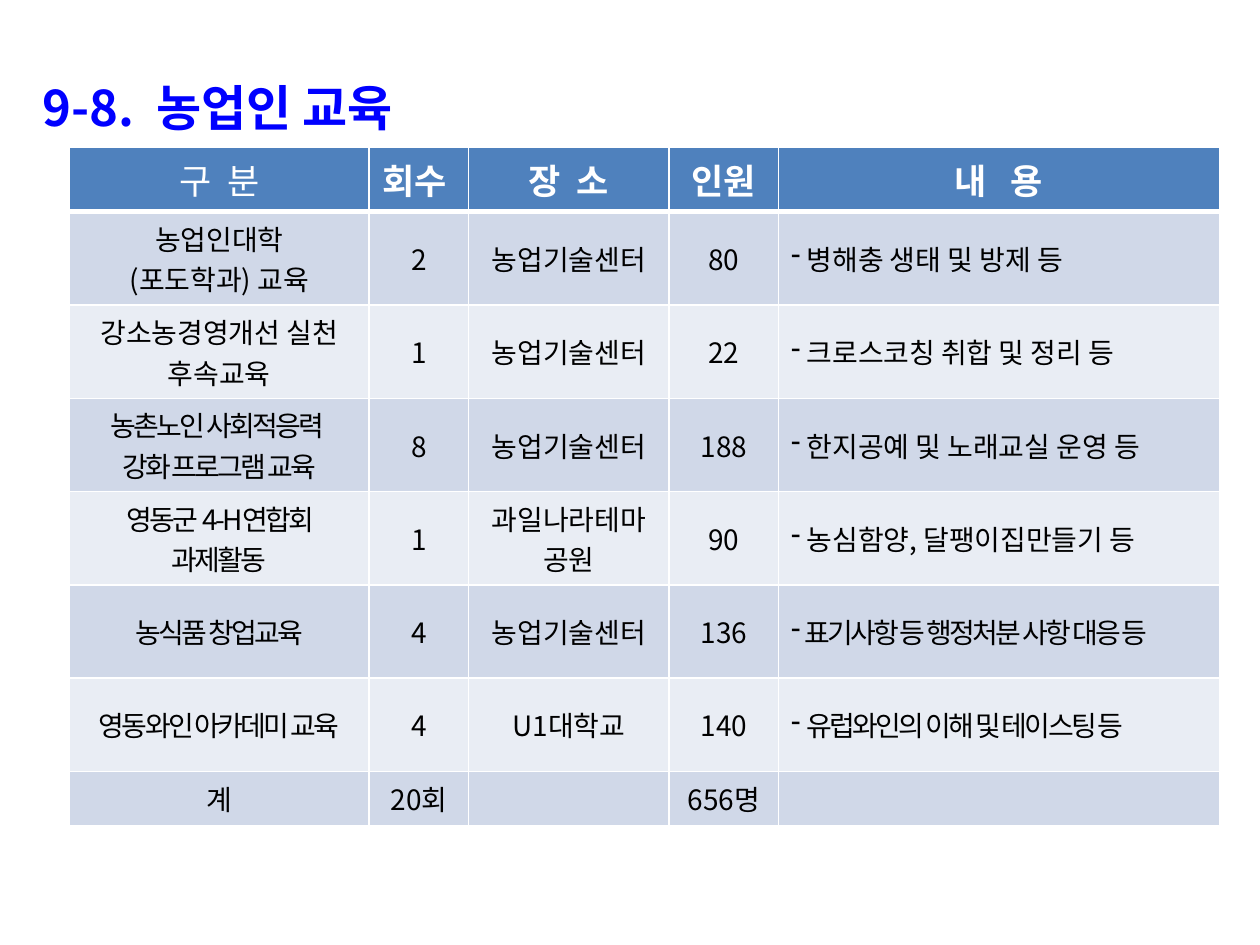
from lxml.etree import SubElement
from pptx import Presentation
from pptx.dml.color import RGBColor
from pptx.enum.text import MSO_ANCHOR, MSO_AUTO_SIZE, PP_ALIGN
from pptx.oxml.ns import qn
from pptx.util import Inches, Pt

BLUE = RGBColor(0x00, 0x00, 0xFF)
HEADER_BLUE = RGBColor(0x4F, 0x81, 0xBD)
BANDS = (RGBColor(0xD0, 0xD8, 0xE8), RGBColor(0xE9, 0xED, 0xF4))
WHITE = RGBColor(0xFF, 0xFF, 0xFF)
BLACK = RGBColor(0x00, 0x00, 0x00)

COLUMN_WIDTHS = (2.38, 0.79, 1.59, 0.87, 3.5)
HEADER_HEIGHT, BODY_HEIGHT, TOTAL_HEIGHT = 0.51, 0.74, 0.43
DETAIL_COLUMN = 4
CENTER = "농업기술센터"


def tight(text):
    """Return a run whose letters are set closer together."""
    return text, -150


HEADERS = ("구  분", "회수  ", "장  소", "인원", "내   용")
COURSES = (
    ([["농업인대학"], ["(포도학과) 교육"]], "2", CENTER, "80", [[" 병해충 생태 및 방제 등"]]),
    ([["강소농경영개선 실천 후속교육"]], "1", CENTER, "22", [[" 크로스코칭 취합 및 정리 등"]]),
    ([[tight("농촌노인 사회적응력 ")], [tight("강화 프로그램 교육")]], "8", CENTER, "188",
     [[" 한지공예 및 노래교실 운영 등"]]),
    ([[tight("영동군 4-H연합회 과제활동")]], "1", "과일나라테마공원", "90",
     [[" 농심함양, 달팽이집만들기 등"]]),
    ([[tight("농식품 창업교육")]], "4", CENTER, "136",
     [[tight(" 표기사항 등 행정처분 사항 대응 등")]]),
    ([[tight("영동와인 아카데미 교육")]], "4", "U1대학교", "140",
     [[" ", tight("유럽와인의 이해 및 테이스팅 등")]]),
    ("계", "20회", "", "656명", ""),
)


class SlideBuilder:
    """Hold the text style and the current slide."""

    font_name = "Noto Sans CJK KR"

    def __init__(self, presentation):
        self.slide = presentation.slides.add_slide(presentation.slide_layouts[5])

    def add_run(self, paragraph, text, size, color, bold=False, spacing=0):
        run = paragraph.add_run()
        run.text = text
        run.font.size = Pt(size)
        run.font.bold = bold
        run.font.color.rgb = color
        run.font.name = self.font_name
        properties = run.font._element
        SubElement(properties, qn("a:ea"), typeface=self.font_name)
        if spacing:
            properties.set("spc", str(spacing))

    def add_title(self, text):
        title = self.slide.shapes.title
        title.left, title.top = Inches(0.24), Inches(0.47)
        title.width, title.height = Inches(9.45), Inches(0.57)
        frame = title.text_frame
        frame.auto_size = MSO_AUTO_SIZE.NONE
        frame.word_wrap = True
        frame.vertical_anchor = MSO_ANCHOR.TOP
        paragraph = frame.paragraphs[0]
        paragraph.alignment = PP_ALIGN.LEFT
        paragraph.line_spacing = 1.2
        properties = paragraph._p.get_or_add_pPr()
        properties.set("marL", str(Inches(0.58)))
        properties.set("indent", str(Inches(-0.58)))
        self.add_run(paragraph, text, 28, BLUE, bold=True)

    def add_borders(self, cell, top, bottom):
        properties = cell._tc.get_or_add_tcPr()
        for side, width in (("L", 1), ("R", 1), ("T", top), ("B", bottom)):
            line = SubElement(properties, qn(f"a:ln{side}"), w=str(Pt(width)))
            fill = SubElement(line, qn("a:solidFill"))
            SubElement(fill, qn("a:srgbClr"), val=str(WHITE))

    def fill_cell(self, cell, content, fill, size, color, bold=False, bulleted=False):
        cell.fill.solid()
        cell.fill.fore_color.rgb = fill
        cell.vertical_anchor = MSO_ANCHOR.MIDDLE
        frame = cell.text_frame
        if not content:
            SubElement(frame.paragraphs[0]._p, qn("a:endParaRPr"), sz=str(size * 100))
            return
        paragraphs = [[content]] if isinstance(content, str) else content
        for index, runs in enumerate(paragraphs):
            paragraph = frame.add_paragraph() if index else frame.paragraphs[0]
            if bulleted:
                properties = paragraph._p.get_or_add_pPr()
                SubElement(properties, qn("a:buFontTx"))
                SubElement(properties, qn("a:buChar"), char="-")
            paragraph.alignment = PP_ALIGN.LEFT if bulleted else PP_ALIGN.CENTER
            for run in runs:
                text, spacing = (run, 0) if isinstance(run, str) else run
                self.add_run(paragraph, text, size, color, bold, spacing)

    def add_course_table(self, headers, courses):
        heights = [HEADER_HEIGHT] + [BODY_HEIGHT] * (len(courses) - 1) + [TOTAL_HEIGHT]
        table = self.slide.shapes.add_table(
            len(heights), len(headers), Inches(0.55), Inches(1.17),
            Inches(sum(COLUMN_WIDTHS)), Inches(sum(heights))).table
        for column, width in zip(table.columns, COLUMN_WIDTHS):
            column.width = Inches(width)
        for row, height in zip(table.rows, heights):
            row.height = Inches(height)
        for column, text in enumerate(headers):
            cell = table.cell(0, column)
            self.add_borders(cell, 1, 3)
            self.fill_cell(cell, text, HEADER_BLUE, 20, WHITE, bold=column > 0)
        for row, course in enumerate(courses, start=1):
            for column, content in enumerate(course):
                cell = table.cell(row, column)
                self.add_borders(cell, 3 if row == 1 else 1, 1)
                self.fill_cell(cell, content, BANDS[(row - 1) % 2], 16, BLACK,
                               bulleted=column == DETAIL_COLUMN)


def main():
    presentation = Presentation()
    presentation.slide_width, presentation.slide_height = Inches(10), Inches(7.5)
    builder = SlideBuilder(presentation)
    builder.add_title("9-8.  농업인 교육")
    builder.add_course_table(HEADERS, COURSES)
    presentation.save("out.pptx")


if __name__ == "__main__":
    main()
